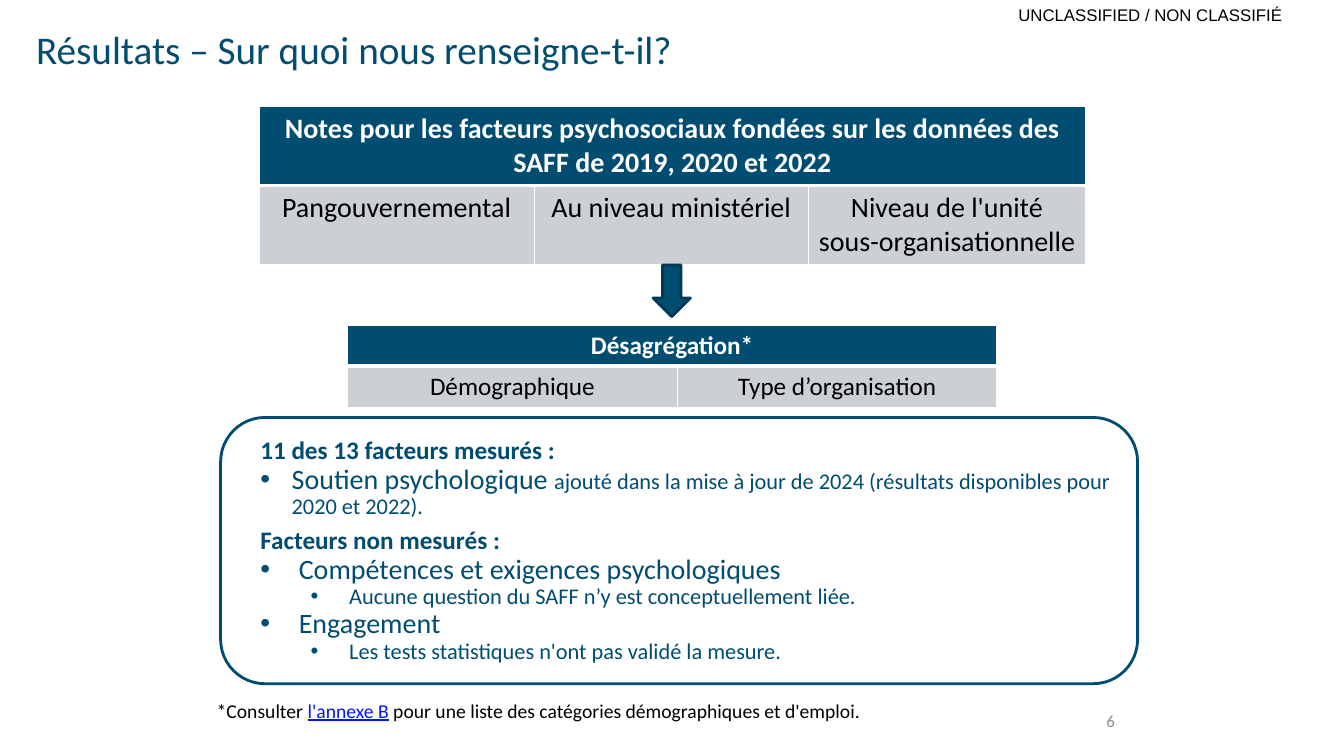
from lxml.etree import SubElement
from pptx import Presentation
from pptx.dml.color import RGBColor
from pptx.enum.shapes import MSO_SHAPE
from pptx.enum.text import MSO_ANCHOR, MSO_AUTO_SIZE, PP_ALIGN
from pptx.oxml.ns import qn
from pptx.util import Cm, Pt

COLORS = {
    "navy": "004D71",
    "navy_dark": "003954",
    "cell": "CCD0D5",
    "white": "FFFFFF",
    "black": "000000",
    "number": "8C8C8C",
    "link": "0415FF",
}


def rgb(key):
    return RGBColor.from_string(COLORS[key])


def set_font(font, size, color, bold=False, name="Calibri"):
    font.size = Pt(size)
    font.name = name
    font.bold = bold
    font.color.rgb = rgb(color)


def place(box, left, top, width, height):
    box.left, box.top, box.width, box.height = Cm(left), Cm(top), Cm(width), Cm(height)


def set_frame(frame, anchor, inset=None):
    frame.word_wrap = True
    frame.auto_size = MSO_AUTO_SIZE.NONE
    frame.vertical_anchor = anchor
    if inset is not None:
        frame.margin_left = frame.margin_right = Cm(inset)
        frame.margin_top = frame.margin_bottom = Cm(inset)


def add_label(slide, area, text, size, color, align=PP_ALIGN.LEFT,
              anchor=MSO_ANCHOR.MIDDLE, inset=None, name="Calibri"):
    label = slide.shapes.add_textbox(*map(Cm, area))
    set_frame(label.text_frame, anchor, inset)
    paragraph = label.text_frame.paragraphs[0]
    paragraph.text = text
    paragraph.alignment = align
    set_font(paragraph.font, size, color, name=name)
    return paragraph


def add_outlined(slide, kind, area, line, fill=None):
    outlined = slide.shapes.add_shape(kind, *map(Cm, area))
    outlined.shadow.inherit = False
    if fill:
        outlined.fill.solid()
        outlined.fill.fore_color.rgb = rgb(fill)
    else:
        outlined.fill.background()
    outlined.line.color.rgb = rgb(line)
    outlined.line.width = Pt(2)


def set_borders(cell, top, bottom):
    properties = cell._tc.get_or_add_tcPr()
    for side, width in (("L", 1), ("R", 1), ("T", top), ("B", bottom)):
        border = SubElement(properties, qn(f"a:ln{side}"), w=str(Pt(width)))
        fill = SubElement(border, qn("a:solidFill"))
        SubElement(fill, qn("a:srgbClr"), val=COLORS["white"])


def add_levels_table(slide, left, top, widths, row_height, heading, levels, size):
    area = (left, top, sum(widths), 2 * row_height)
    table = slide.shapes.add_table(2, len(levels), *map(Cm, area)).table
    for column, width in zip(table.columns, widths):
        column.width = Cm(width)
    for row in table.rows:
        row.height = Cm(row_height)
    table.cell(0, 0).merge(table.cell(0, len(levels) - 1))
    headings = [heading] + [""] * (len(levels) - 1)
    styles = ((headings, "navy", "white", True, 1, 3),
              (levels, "cell", "black", False, 3, 1))
    for row, (texts, fill, color, bold, above, below) in enumerate(styles):
        for column, text in enumerate(texts):
            cell = table.cell(row, column)
            set_borders(cell, above, below)
            cell.fill.solid()
            cell.fill.fore_color.rgb = rgb(fill)
            paragraph = cell.text_frame.paragraphs[0]
            paragraph.text = text
            paragraph.alignment = PP_ALIGN.CENTER
            set_font(paragraph.font, size, color, bold)


def set_bullet(paragraph, margin, hanging):
    properties = paragraph._p.get_or_add_pPr()
    properties.set("marL", str(Cm(margin)))
    properties.set("indent", str(-Cm(hanging)))
    if hanging:
        SubElement(properties, qn("a:buFont"), typeface="Arial")
        SubElement(properties, qn("a:buChar"), char="•")
    else:
        SubElement(properties, qn("a:buNone"))


def fill_factors(body):
    place(body, 6.38, 10.82, 22.6, 6.12)
    frame = body.text_frame
    set_frame(frame, MSO_ANCHOR.MIDDLE, 0.18)
    heading, support, factor, detail = (
        (0, 18, 0, 0), (0, 20, 0.79, 0.79), (0, 20, 0.97, 0.97), (1, 16, 2.24, 0.97))
    factors = (
        (heading, "11 des 13 facteurs mesurés :"),
        (support, "Soutien psychologique "),
        (heading, "Facteurs non mesurés :"),
        (factor, "Compétences et exigences psychologiques"),
        (detail, "Aucune question du SAFF n’y est conceptuellement liée."),
        (factor, "Engagement"),
        (detail, "Les tests statistiques n'ont pas validé la mesure."),
    )
    for index, (style, text) in enumerate(factors):
        level, size, margin, hanging = style
        paragraph = frame.add_paragraph() if index else frame.paragraphs[0]
        paragraph.add_run().text = text
        paragraph.level = level
        paragraph.alignment = PP_ALIGN.LEFT
        paragraph.line_spacing = 0.9
        paragraph.space_before = Pt(0)
        paragraph.space_after = Pt(6 if style is support else 0)
        set_bullet(paragraph, margin, hanging)
        set_font(paragraph.font, size, "navy", style is heading)
        if style is support:
            update = paragraph.add_run()
            update.text = ("ajouté dans la mise à jour de 2024 "
                           "(résultats disponibles pour 2020 et 2022).")
            update.font.size = Pt(16)


def fill_title(title):
    place(title, 0.91, 0.64, 16.46, 2.44)
    set_frame(title.text_frame, MSO_ANCHOR.TOP, 0)
    paragraph = title.text_frame.paragraphs[0]
    paragraph.text = "Résultats – Sur quoi nous renseigne-t-il?"
    paragraph.alignment = PP_ALIGN.LEFT
    set_font(paragraph.font, 28, "navy")


def add_footnote(slide):
    footnote = add_label(slide, (5.21, 17.48, 21.21, 0.86), "*Consulter ", 14, "black",
                         anchor=MSO_ANCHOR.TOP)
    annex = footnote.add_run()
    annex.text = "l'annexe B"
    annex.font.color.rgb = rgb("link")
    annex.font.underline = True
    footnote.add_run().text = " pour une liste des catégories démographiques et d'emploi."


def main():
    deck = Presentation()
    deck.slide_width, deck.slide_height = Cm(33.87), Cm(19.05)
    slide = deck.slides.add_slide(deck.slide_layouts[1])
    fill_title(slide.shapes.title)
    fill_factors(slide.placeholders[1])
    add_label(slide, (23.62, 0.13, 8.7, 0.51), "UNCLASSIFIED / NON CLASSIFIÉ", 12, "black",
              PP_ALIGN.RIGHT, inset=0, name="Arial")
    add_label(slide, (22.43, 17.65, 5.92, 1.02), "6", 12, "number", PP_ALIGN.RIGHT)
    add_footnote(slide)
    add_outlined(slide, MSO_SHAPE.ROUNDED_RECTANGLE, (5.56, 10.52, 23.11, 6.71), "navy")
    add_levels_table(
        slide, 6.53, 2.69, (6.93, 6.91, 6.99), 1.94,
        "Notes pour les facteurs psychosociaux fondées sur les données des "
        "SAFF de 2019, 2020 et 2022",
        ("Pangouvernemental", "Au niveau ministériel",
         "Niveau de l'unité sous-organisationnelle"), 20)
    add_levels_table(slide, 8.76, 8.2, (8.31, 8.05), 1.03, "Désagrégation*",
                     ("Démographique", "Type d’organisation"), 18)
    add_outlined(slide, MSO_SHAPE.DOWN_ARROW, (16.46, 6.68, 0.94, 1.3), "navy_dark", "navy")
    deck.save("out.pptx")


if __name__ == "__main__":
    main()
